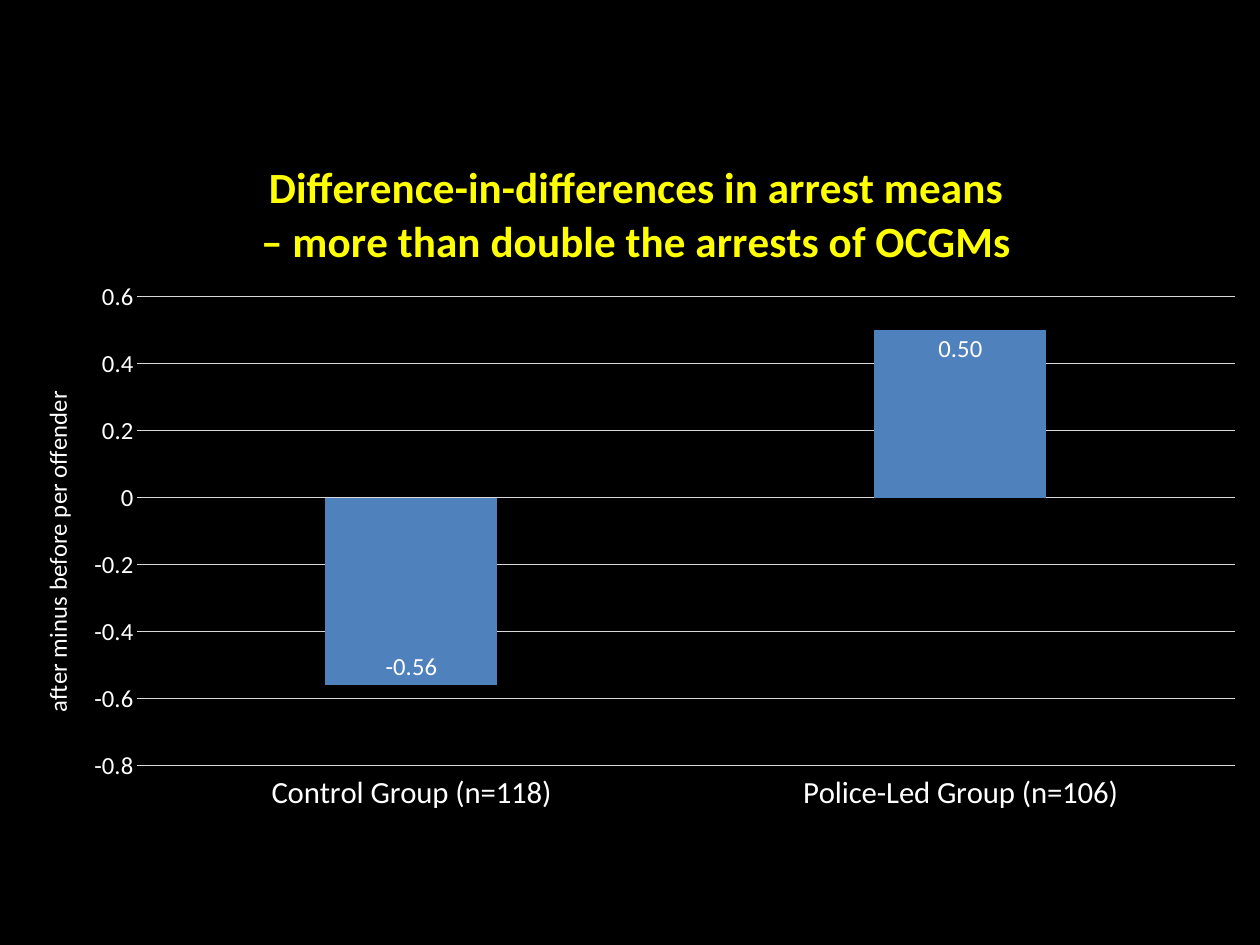
import pptx
import pptx.chart.data
import pptx.dml.color
import pptx.enum.chart
import pptx.oxml
import pptx.oxml.ns
import pptx.util
from pptx.util import Inches

THEME = {
    "font": "Calibri",
    "background": "000000", "text": "FFFFFF", "heading": "FFFF00",
    "bar": "4F81BD", "rule": "D9D9D9",
    "heading_size": 35, "group_size": 25, "text_size": 20,
}


def style_font(font, color, size, bold=False):
    settings = {"name": THEME["font"], "size": pptx.util.Pt(THEME[size]), "bold": bold}
    for name, value in settings.items():
        setattr(font, name, value)
    font.color.rgb = pptx.dml.color.RGBColor.from_string(THEME[color])


def place(element, **fractions):
    """Fix a chart part's place, in fractions of the chart's size."""
    layout = element.find(pptx.oxml.ns.qn("c:layout"))
    if layout is None:
        layout = pptx.oxml.parse_xml(f'<c:layout {pptx.oxml.ns.nsdecls("c")}/>')
        element.insert(0, layout)
    manual = layout.makeelement(pptx.oxml.ns.qn("c:manualLayout"))
    layout.append(manual)
    for tag, value in fractions.items():
        entry = manual.makeelement(pptx.oxml.ns.qn(f"c:{tag}"))
        entry.set("val", str(value))
        manual.append(entry)


presentation = pptx.Presentation()
presentation.slide_width = Inches(14.22)
presentation.slide_height = Inches(10.67)
slide = presentation.slides.add_slide(presentation.slide_layouts[6])
slide.background.fill.solid()
slide.background.fill.fore_color.rgb = pptx.dml.color.RGBColor.from_string(THEME["background"])

arrests = pptx.chart.data.CategoryChartData()
arrests.categories = ["Control Group (n=118)", "Police-Led Group (n=106)"]
arrests.add_series("Series 1", [-0.56, 0.5])
chart = slide.shapes.add_chart(
    pptx.enum.chart.XL_CHART_TYPE.COLUMN_CLUSTERED,
    Inches(0.09), Inches(1.51), Inches(14.13), Inches(7.82), arrests).chart
chart.has_legend = False
style_font(chart.font, "text", "text_size")
place(chart.plots[0]._element.getparent(), layoutTarget="inner", xMode="edge", yMode="edge",
      x=0.103, y=0.235, w=0.877, h=0.678)

# Titles
groups, difference = chart.category_axis, chart.value_axis
titles = [
    (chart, "Difference-in-differences in arrest means\n– more than double the arrests of OCGMs",
     "heading", "heading_size", True, 0.2, 0.035),
    (difference, "after minus before per offender", "text", "text_size", False, 0.022, 0.365),
]
for owner, wording, color, size, bold, x, y in titles:
    title = owner.chart_title if owner is chart else owner.axis_title
    title.text_frame.text = wording
    for paragraph in title.text_frame.paragraphs:
        style_font(paragraph.font, color, size, bold)
        for run in paragraph.runs:
            style_font(run.font, color, size, bold)
    place(title._element, xMode="edge", yMode="edge", x=x, y=y)
chart.chart_title.include_in_layout = False

# Axes
for axis, size in ((groups, "group_size"), (difference, "text_size")):
    axis.major_tick_mark = axis.minor_tick_mark = pptx.enum.chart.XL_TICK_MARK.NONE
    style_font(axis.tick_labels.font, "text", size)
groups.tick_label_position = pptx.enum.chart.XL_TICK_LABEL_POSITION.LOW
for name, value in {"minimum_scale": -0.8, "maximum_scale": 0.6, "major_unit": 0.2}.items():
    setattr(difference, name, value)
difference.tick_labels.number_format = "General"
difference.tick_labels.number_format_is_linked = False
difference.format.line.fill.background()
for line in (groups.format.line, difference.major_gridlines.format.line):
    line.color.rgb = pptx.dml.color.RGBColor.from_string(THEME["rule"])
    line.width = pptx.util.Pt(0.75)

# Bars and their values
plot = chart.plots[0]
for name, value in {"gap_width": 219, "overlap": -27, "vary_by_categories": False}.items():
    setattr(plot, name, value)
bars = plot.series[0]
bars.invert_if_negative = False
bars.format.fill.solid()
bars.format.fill.fore_color.rgb = pptx.dml.color.RGBColor.from_string(THEME["bar"])
values = bars.data_labels
for name, value in {
    "show_value": True, "number_format": "#,##0.00", "number_format_is_linked": False,
    "position": pptx.enum.chart.XL_LABEL_POSITION.INSIDE_END,
}.items():
    setattr(values, name, value)
style_font(values.font, "text", "text_size")

presentation.save("out.pptx")
